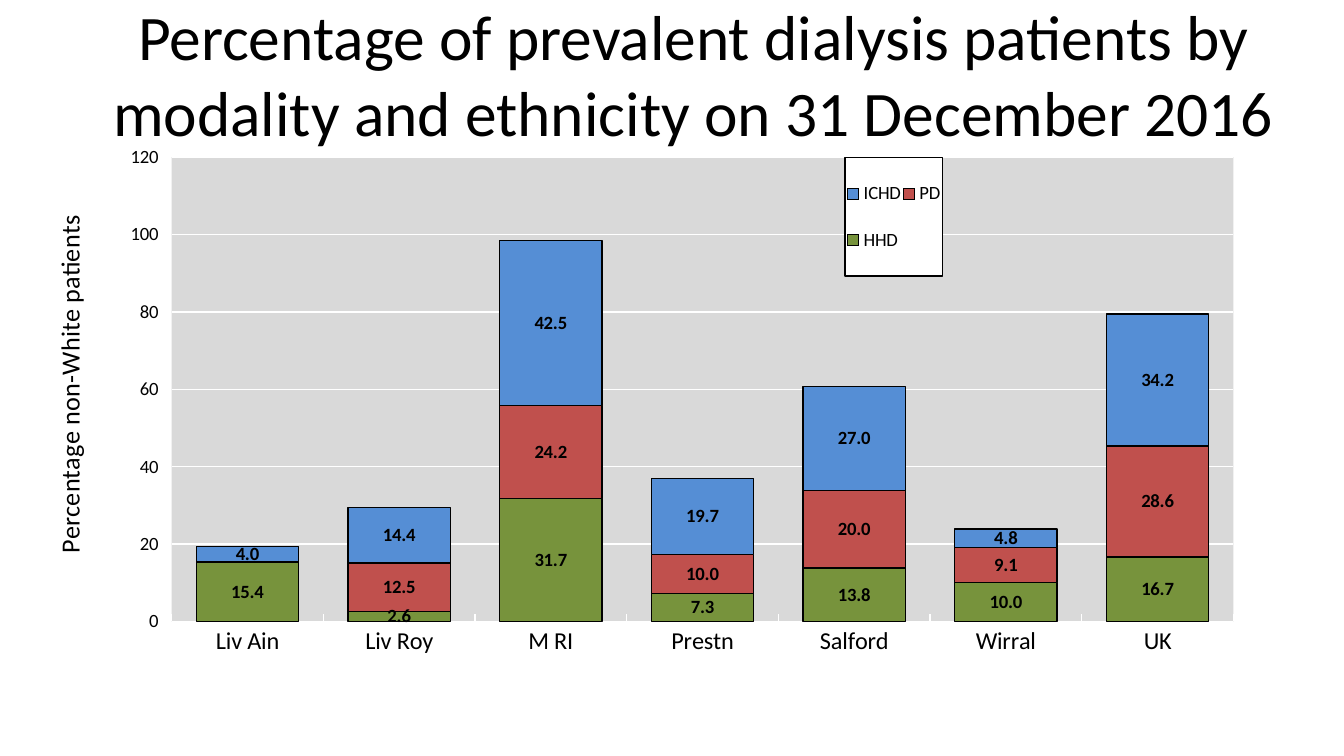
import dataclasses

import pptx
import pptx.chart.data
import pptx.dml.color
import pptx.enum.chart
import pptx.enum.text
import pptx.oxml
import pptx.oxml.ns
import pptx.util

Pt = pptx.util.Pt
qn = pptx.oxml.ns.qn


@dataclasses.dataclass(frozen=True)
class Theme:
    font: str = "Calibri"
    ink: str = "000000"
    paper: str = "FFFFFF"
    plot: str = "D9D9D9"
    title_size: float = 34
    axis_title_size: float = 14
    category_size: float = 13
    small_size: float = 10
    line_width: float = 0.75


THEME = Theme()

CENTRES = ["Liv Ain", "Liv Roy", "M RI", "Prestn", "Salford", "Wirral", "UK"]
MODALITIES = [
    ("HHD", "77933C", [15.4, 2.6, 31.7, 7.3, 13.8, 10, 16.7]),
    ("PD", "C0504D", [0, 12.5, 24.2, 10, 20, 9.1, 28.6]),
    ("ICHD", "558ED5", [4, 14.4, 42.5, 19.7, 27, 4.8, 34.2]),
]


def colour(code):
    return pptx.dml.color.RGBColor.from_string(code)


def style_font(font, size, bold=False):
    font.name = THEME.font
    font.size = Pt(size)
    font.bold = bold
    font.color.rgb = colour(THEME.ink)


def style_line(line, code):
    line.color.rgb = colour(code)
    line.width = Pt(THEME.line_width)


def chart_xml(markup):
    return pptx.oxml.parse_xml(markup.replace(">", " " + pptx.oxml.ns.nsdecls("c", "a") + ">", 1))


def fill_xml(fill, line=None):
    outline = "<a:ln><a:noFill/></a:ln>"
    if line:
        outline = (
            f'<a:ln w="{Pt(THEME.line_width)}"><a:solidFill>'
            f'<a:srgbClr val="{line}"/></a:solidFill></a:ln>'
        )
    return chart_xml(
        f'<c:spPr><a:solidFill><a:srgbClr val="{fill}"/></a:solidFill>{outline}</c:spPr>'
    )


def place(element, index, left, top, width=None, height=None, inner=False):
    for old in element.findall(qn("c:layout")):
        element.remove(old)
    parts = '<c:layoutTarget val="inner"/>' if inner else ""
    parts += '<c:xMode val="edge"/><c:yMode val="edge"/>'
    for name, value in zip("xywh", (left, top, width, height)):
        if value is not None:
            parts += f'<c:{name} val="{value}"/>'
    layout = f"<c:layout><c:manualLayout>{parts}</c:manualLayout></c:layout>"
    element.insert(index, chart_xml(layout))


def add_title(page, text):
    box = page.shapes.title
    box.left, box.top, box.width, box.height = Pt(42.5), Pt(11.5), Pt(658), Pt(55.5)
    frame = box.text_frame
    frame.word_wrap = True
    frame.auto_size = pptx.enum.text.MSO_AUTO_SIZE.NONE
    frame.vertical_anchor = pptx.enum.text.MSO_ANCHOR.MIDDLE
    para = frame.paragraphs[0]
    para.alignment = pptx.enum.text.PP_ALIGN.CENTER
    span = para.add_run()
    span.text = text
    style_font(span.font, THEME.title_size)


def style_series(series, code):
    series.format.fill.solid()
    series.format.fill.fore_color.rgb = colour(code)
    style_line(series.format.line, THEME.ink)
    labels = series.data_labels
    labels.show_value = True
    labels.number_format = "0.0;;"
    labels.number_format_is_linked = False
    labels.position = pptx.enum.chart.XL_LABEL_POSITION.CENTER
    style_font(labels.font, THEME.small_size, bold=True)


def style_category_axis(axis):
    axis.major_tick_mark = pptx.enum.chart.XL_TICK_MARK.INSIDE
    style_font(axis.tick_labels.font, THEME.category_size)
    style_line(axis.format.line, THEME.paper)


def style_value_axis(axis, text):
    axis.minimum_scale, axis.maximum_scale, axis.major_unit = 0, 120, 20
    axis.major_tick_mark = pptx.enum.chart.XL_TICK_MARK.OUTSIDE
    axis.tick_labels.number_format = "General"
    axis.tick_labels.number_format_is_linked = False
    style_font(axis.tick_labels.font, THEME.small_size)
    axis.format.line.fill.background()
    style_line(axis.major_gridlines.format.line, THEME.paper)

    span = axis.axis_title.text_frame.paragraphs[0].add_run()
    span.text = text
    style_font(span.font, THEME.axis_title_size)
    title = axis._element.find(qn("c:title"))
    body = title.find(".//" + qn("a:bodyPr"))
    body.set("rot", "-5400000")
    body.set("vert", "horz")
    place(title, 1, 0.016, 0.145)


def style_legend(chart):
    chart.has_legend = True
    legend = chart.legend
    legend.position = pptx.enum.chart.XL_LEGEND_POSITION.RIGHT
    legend.include_in_layout = True
    style_font(legend.font, THEME.small_size)
    element = legend._element
    place(element, 1, 0.661, 0.054, 0.079, 0.203)
    element.find(qn("c:overlay")).addnext(fill_xml(THEME.paper, THEME.ink))


def add_stacked_chart(page):
    data = pptx.chart.data.CategoryChartData()
    data.categories = CENTRES
    for name, _, values in MODALITIES:
        data.add_series(name, values)
    chart = page.shapes.add_chart(
        pptx.enum.chart.XL_CHART_TYPE.COLUMN_STACKED,
        Pt(14.4), Pt(67.7), Pt(663), Pt(311.8), data,
    ).chart
    chart.has_title = False
    style_font(chart.font, THEME.small_size)

    plot = chart.plots[0]
    plot.gap_width = 48
    plot.overlap = 100
    for series, (_, code, _) in zip(plot.series, MODALITIES):
        style_series(series, code)

    style_category_axis(chart.category_axis)
    style_value_axis(chart.value_axis, "Percentage non-White patients")
    style_legend(chart)

    area = chart._chartSpace.find(".//" + qn("c:plotArea"))
    place(area, 0, 0.117, 0.053, 0.858, 0.798, inner=True)
    area.append(fill_xml(THEME.plot))


def main():
    deck = pptx.Presentation()
    deck.slide_width, deck.slide_height = Pt(720), Pt(405)
    page = deck.slides.add_slide(deck.slide_layouts[5])
    add_title(
        page,
        "Percentage of prevalent dialysis patients by modality and ethnicity on 31 December 2016",
    )
    add_stacked_chart(page)
    deck.save("out.pptx")


if __name__ == "__main__":
    main()
